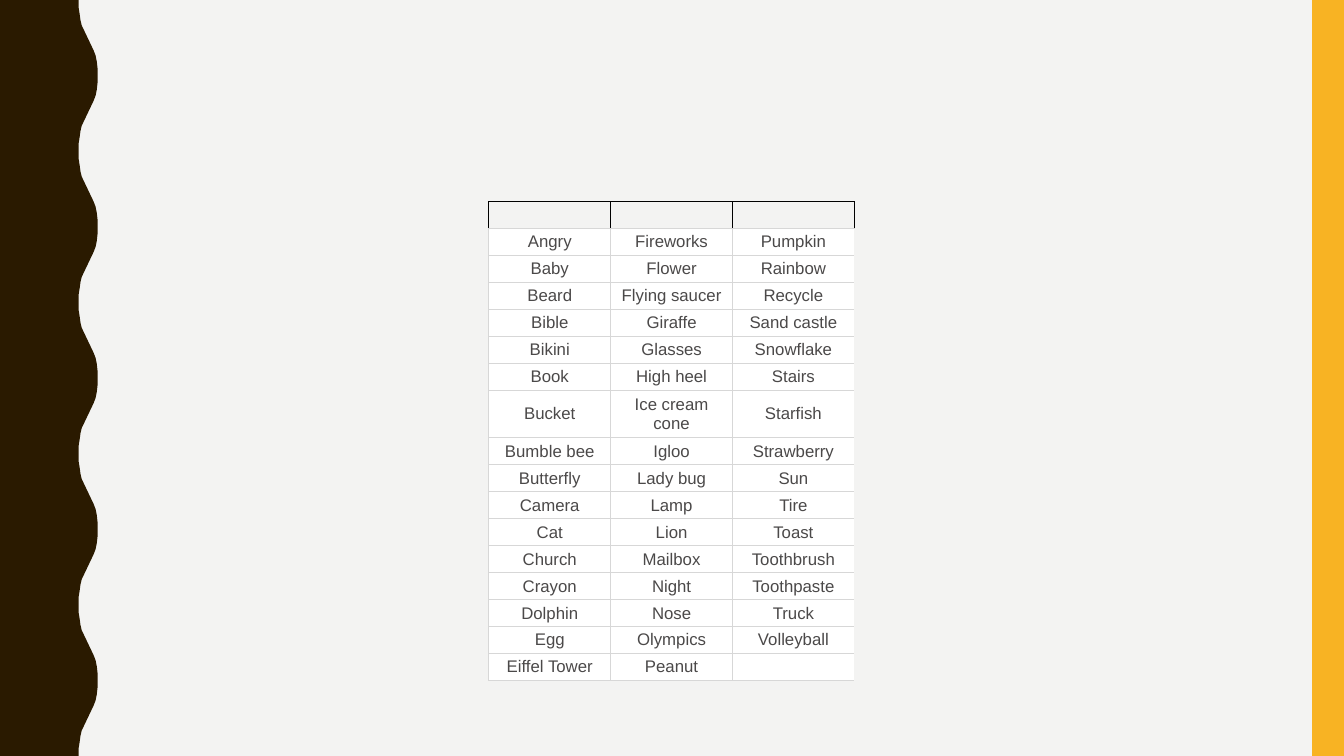
from lxml import etree
from pptx import Presentation
from pptx.dml.color import RGBColor
from pptx.enum.shapes import MSO_SHAPE
from pptx.enum.text import MSO_ANCHOR, PP_ALIGN
from pptx.oxml.ns import qn
from pptx.util import Cm, Pt

RECTANGLE = MSO_SHAPE.RECTANGLE
MIDDLE = MSO_ANCHOR.MIDDLE
CENTER = PP_ALIGN.CENTER

COLORS = {
    "background": "F3F3F2",
    "wave": "2A1A00",
    "bar": "F8B323",
    "cell": "FFFFFF",
    "text": "4B4949",
    "grid": "D7D7D7",
    "header_line": "000000",
}

# Slide and wave sizes in centimetres
WIDTH, HEIGHT = 33.87, 19.05
WAVE_COUNT = 5
WAVE_LENGTH = HEIGHT / WAVE_COUNT
RISING_EDGE = [
    (1.98, 0), (1.98, 0.18), (2.01, 0.36), (2.03, 0.51), (2.06, 0.64),
    (2.36, 1.27), (2.41, 1.4), (2.44, 1.55), (2.46, 1.73), (2.46, 1.9),
]

WORD_ROWS = [
    ("Angry", "Fireworks", "Pumpkin"),
    ("Baby", "Flower", "Rainbow"),
    ("Beard", "Flying saucer", "Recycle"),
    ("Bible", "Giraffe", "Sand castle"),
    ("Bikini", "Glasses", "Snowflake"),
    ("Book", "High heel", "Stairs"),
    ("Bucket", "Ice cream cone", "Starfish"),
    ("Bumble bee", "Igloo", "Strawberry"),
    ("Butterfly", "Lady bug", "Sun"),
    ("Camera", "Lamp", "Tire"),
    ("Cat", "Lion", "Toast"),
    ("Church", "Mailbox", "Toothbrush"),
    ("Crayon", "Night", "Toothpaste"),
    ("Dolphin", "Nose", "Truck"),
    ("Egg", "Olympics", "Volleyball"),
    ("Eiffel Tower", "Peanut", ""),
]
COLUMN_WIDTH = 3.07
ROW_HEIGHT, TALL_ROW_HEIGHT = 0.68, 1.19
TALL_ROW = 7


def color(name):
    return RGBColor.from_string(COLORS[name])


def paint(shape, fill):
    shape.shadow.inherit = False
    shape.fill.solid()
    shape.fill.fore_color.rgb = color(fill)
    shape.line.fill.background()


def add_wave_edge(page):
    falling_edge = [(x, WAVE_LENGTH - y) for x, y in reversed(RISING_EDGE)]
    points = [
        (Cm(x), Cm(y + wave * WAVE_LENGTH))
        for wave in range(WAVE_COUNT)
        for x, y in RISING_EDGE + falling_edge
    ]
    builder = page.shapes.build_freeform(0, 0)
    builder.add_line_segments(points + [(0, Cm(HEIGHT))], close=True)
    paint(builder.convert_to_shape(), "wave")


def add_side_bar(page):
    bar = page.shapes.add_shape(RECTANGLE, Cm(33.07), 0, Cm(0.8), Cm(HEIGHT))
    paint(bar, "bar")


def set_borders(cell, borders):
    """Each border is (side, colour name or None, width in points)."""
    properties = cell._tc.get_or_add_tcPr()
    for position, (side, name, width) in enumerate(borders):
        line = etree.Element(qn(f"a:ln{side}"), w=str(Pt(width)))
        if name:
            fill = etree.SubElement(line, qn("a:solidFill"))
            etree.SubElement(fill, qn("a:srgbClr"), val=COLORS[name])
        else:
            etree.SubElement(line, qn("a:noFill"))
        properties.insert(position, line)


def format_cell(cell, text, is_header, is_last_column, is_last_row):
    cell.margin_left = cell.margin_right = Cm(0.18)
    cell.margin_top = cell.margin_bottom = Cm(0.08)
    cell.vertical_anchor = MIDDLE
    para = cell.text_frame.paragraphs[0]
    para.text = text
    para.alignment = CENTER
    para.font.name = "Arial"
    para.font.size = Pt(12)
    para.font.color.rgb = color("text")

    if is_header:
        cell.fill.background()
        left = right = top = "header_line"
    else:
        cell.fill.solid()
        cell.fill.fore_color.rgb = color("cell")
        left = top = "grid"
        right = None if is_last_column else "grid"
    bottom_width = 0.75 if is_last_row else 1
    set_borders(cell, [("L", left, 1), ("R", right, 1), ("T", top, 1),
                       ("B", "grid", bottom_width)])


def add_word_table(page):
    rows = [("", "", "")] + WORD_ROWS
    column_count = len(rows[0])
    height = ROW_HEIGHT * (len(rows) - 1) + TALL_ROW_HEIGHT
    frame = page.shapes.add_table(
        len(rows), column_count, Cm(12.32), Cm(5.08),
        Cm(COLUMN_WIDTH * column_count), Cm(height))
    table = frame.table
    table.first_row = table.horz_banding = False
    for column in table.columns:
        column.width = Cm(COLUMN_WIDTH)
    for r, words in enumerate(rows):
        table.rows[r].height = Cm(TALL_ROW_HEIGHT if r == TALL_ROW else ROW_HEIGHT)
        for c, word in enumerate(words):
            format_cell(table.cell(r, c), word, is_header=r == 0,
                        is_last_column=c == column_count - 1,
                        is_last_row=r == len(rows) - 1)


def main():
    deck = Presentation()
    deck.slide_width, deck.slide_height = Cm(WIDTH), Cm(HEIGHT)
    page = deck.slides.add_slide(deck.slide_layouts[6])
    page.background.fill.solid()
    page.background.fill.fore_color.rgb = color("background")

    # Decorated edges
    add_wave_edge(page)
    add_side_bar(page)

    # Word list
    add_word_table(page)
    deck.save("out.pptx")


if __name__ == "__main__":
    main()
